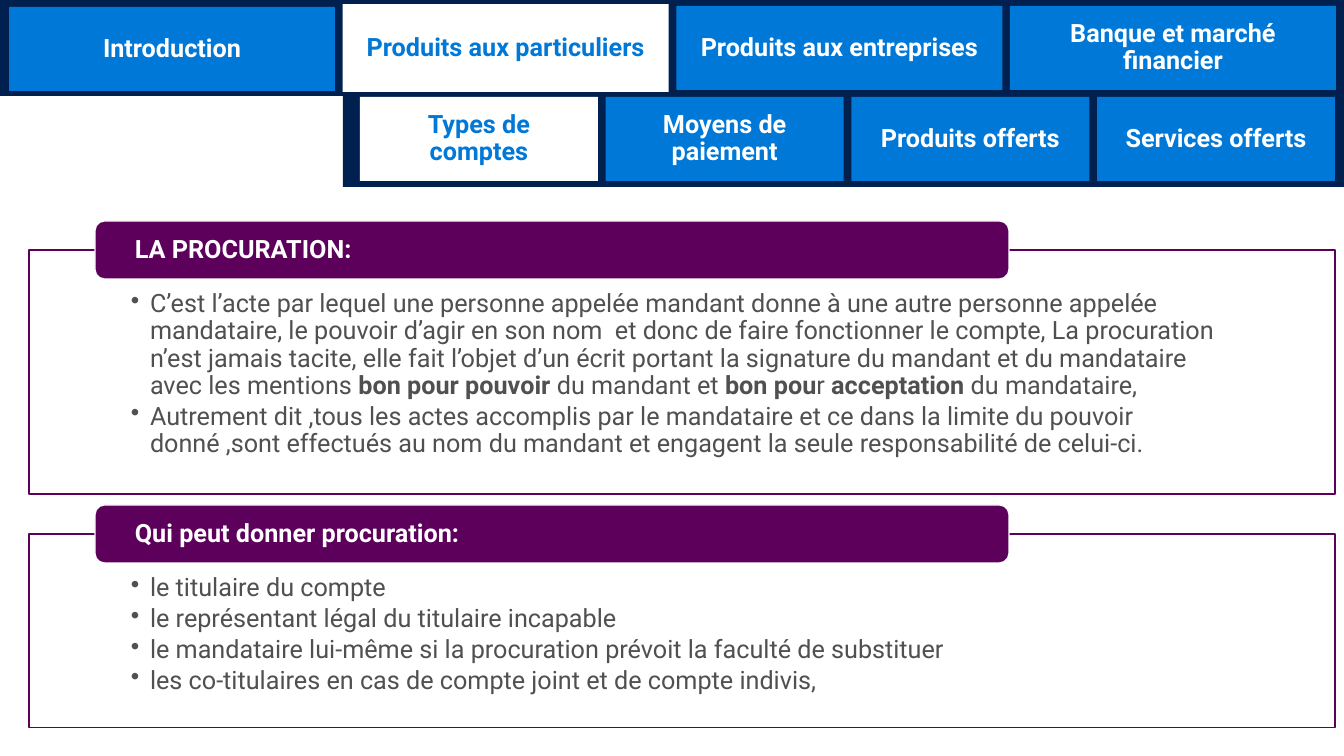
from dataclasses import dataclass

import lxml.etree
import pptx
import pptx.dml.color
import pptx.enum.shapes
import pptx.enum.text
import pptx.oxml.ns
import pptx.shapes.autoshape
import pptx.slide
import pptx.text.text
import pptx.util

RGBColor = pptx.dml.color.RGBColor
SHAPE = pptx.enum.shapes.MSO_SHAPE
ANCHOR = pptx.enum.text.MSO_ANCHOR
ALIGN = pptx.enum.text.PP_ALIGN

NAVY = RGBColor(0x00, 0x20, 0x50)
BLUE = RGBColor(0x00, 0x78, 0xD7)
PURPLE = RGBColor(0x5C, 0x00, 0x5C)
GREY = RGBColor(0x50, 0x50, 0x50)
WHITE = RGBColor(0xFF, 0xFF, 0xFF)

SLIDE_WIDTH, SLIDE_HEIGHT = 1344, 756
EMU_PER_PX = 12192000 / SLIDE_WIDTH
FONT = "Roboto"
FONT_SIZE = 18
BULLET_INDENT = 19


@dataclass
class Tab:
    label: str
    top: int
    height: int = 84
    selected: bool = False


@dataclass
class TabRow:
    left: int
    right: int
    tab_width: int
    tabs: list[Tab]


@dataclass
class Run:
    text: str
    bold: bool = False


@dataclass
class Section:
    title: str
    top: int
    frame_height: int
    bullets: list[list[Run]]


MAIN_TABS = TabRow(9, 1336, 326, [
    Tab("Introduction", 7),
    Tab("Produits aux particuliers", 4, 88, selected=True),
    Tab("Produits aux entreprises", 6),
    Tab("Banque et marché financier", 6),
])
SUB_TABS = TabRow(360, 1335, 238, [
    Tab("Types de comptes", 97, selected=True),
    Tab("Moyens de paiement", 97),
    Tab("Produits offerts", 97),
    Tab("Services offerts", 97),
])
SECTIONS = [
    Section("LA PROCURATION:", 221, 244, [
        [
            Run("C’est l’acte par lequel une personne appelée mandant donne à une autre "
                "personne appelée mandataire, le pouvoir d’agir en son nom  et donc de faire "
                "fonctionner le compte, La procuration n’est jamais tacite, elle fait l’objet "
                "d’un écrit portant la signature du mandant et du mandataire avec les mentions "),
            Run("bon pour pouvoir ", True),
            Run("du mandant et "),
            Run("bon pou", True),
            Run("r "),
            Run("acceptation", True),
            Run(" du mandataire,"),
        ],
        [Run("Autrement dit ,tous les actes accomplis par le mandataire et ce dans la limite "
             "du pouvoir donné ,sont effectués au nom du mandant et engagent la seule "
             "responsabilité de celui-ci.")],
    ]),
    Section("Qui peut donner procuration:", 505, 194, [
        [Run("le titulaire du compte")],
        [Run("le représentant légal du titulaire incapable")],
        [Run("le mandataire lui-même si la procuration prévoit la faculté de substituer")],
        [Run("les co-titulaires en cas de compte joint et de compte indivis,")],
    ]),
]


def px(length: float) -> pptx.util.Emu:
    return pptx.util.Emu(round(length * EMU_PER_PX))


def add_box(page: pptx.slide.Slide, left: float, top: int, width: int, height: int,
            fill: RGBColor, line: RGBColor | None = None,
            kind: SHAPE = SHAPE.RECTANGLE) -> pptx.shapes.autoshape.Shape:
    box = page.shapes.add_shape(kind, px(left), px(top), px(width), px(height))
    box.shadow.inherit = False
    box.fill.solid()
    box.fill.fore_color.rgb = fill
    if line is None:
        box.line.fill.background()
    else:
        box.line.color.rgb = line
        box.line.width = pptx.util.Pt(0.85)
    return box


def set_frame(box: pptx.shapes.autoshape.Shape, side: int, top: int, bottom: int,
              anchor: ANCHOR) -> pptx.text.text.TextFrame:
    frame = box.text_frame
    frame.word_wrap = True
    frame.vertical_anchor = anchor
    frame.margin_left = frame.margin_right = px(side)
    frame.margin_top, frame.margin_bottom = px(top), px(bottom)
    return frame


def style_paragraph(para: pptx.text.text._Paragraph, color: RGBColor, align: ALIGN,
                    space_after: float, bold: bool | None = None) -> None:
    para.alignment = align
    para.line_spacing = 0.9
    para.space_after = pptx.util.Pt(space_after)
    para.font.name = FONT
    para.font.size = pptx.util.Pt(FONT_SIZE)
    para.font.color.rgb = color
    para.font.bold = bold


def add_bullet(para: pptx.text.text._Paragraph) -> None:
    properties = para._p.get_or_add_pPr()
    properties.set("marL", str(px(BULLET_INDENT)))
    properties.set("indent", str(px(-BULLET_INDENT)))
    bullet = lxml.etree.SubElement(properties, pptx.oxml.ns.qn("a:buChar"))
    bullet.set("char", "•")


def draw_tabs(page: pptx.slide.Slide, row: TabRow) -> None:
    pitch = (row.right - row.left - row.tab_width) / (len(row.tabs) - 1)
    for index, tab in enumerate(row.tabs):
        fill, color = (WHITE, BLUE) if tab.selected else (BLUE, WHITE)
        box = add_box(page, row.left + index * pitch, tab.top, row.tab_width, tab.height, fill)
        para = set_frame(box, 20, 16, 16, ANCHOR.MIDDLE).paragraphs[0]
        para.text = tab.label
        style_paragraph(para, color, ALIGN.CENTER, 6, bold=True)


def draw_section(page: pptx.slide.Slide, section: Section) -> None:
    # Outlined frame holding the bullets
    body = add_box(page, 29, section.top + 29, 1306, section.frame_height, WHITE, PURPLE)
    frame = set_frame(body, 102, 41, 14, ANCHOR.TOP)
    for index, bullet in enumerate(section.bullets):
        para = frame.add_paragraph() if index else frame.paragraphs[0]
        add_bullet(para)
        style_paragraph(para, GREY, ALIGN.LEFT, 2.7)
        for part in bullet:
            span = para.add_run()
            span.text = part.text
            if part.bold:
                span.font.bold = True

    # Title bar across the top edge of the frame
    bar = add_box(page, 95, section.top, 914, 58, PURPLE, WHITE, SHAPE.ROUNDED_RECTANGLE)
    para = set_frame(bar, 37, 0, 0, ANCHOR.MIDDLE).paragraphs[0]
    para.text = section.title
    style_paragraph(para, WHITE, ALIGN.LEFT, 6, bold=True)


def main() -> None:
    deck = pptx.Presentation()
    deck.slide_width, deck.slide_height = px(SLIDE_WIDTH), px(SLIDE_HEIGHT)
    page = deck.slides.add_slide(deck.slide_layouts[6])

    # Navigation bands and tabs
    add_box(page, 0, 0, SLIDE_WIDTH, 96, NAVY)
    add_box(page, 343, 91, SLIDE_WIDTH - 343, 96, NAVY)
    for row in (MAIN_TABS, SUB_TABS):
        draw_tabs(page, row)

    # Content sections
    for section in SECTIONS:
        draw_section(page, section)

    deck.save("out.pptx")


if __name__ == "__main__":
    main()
